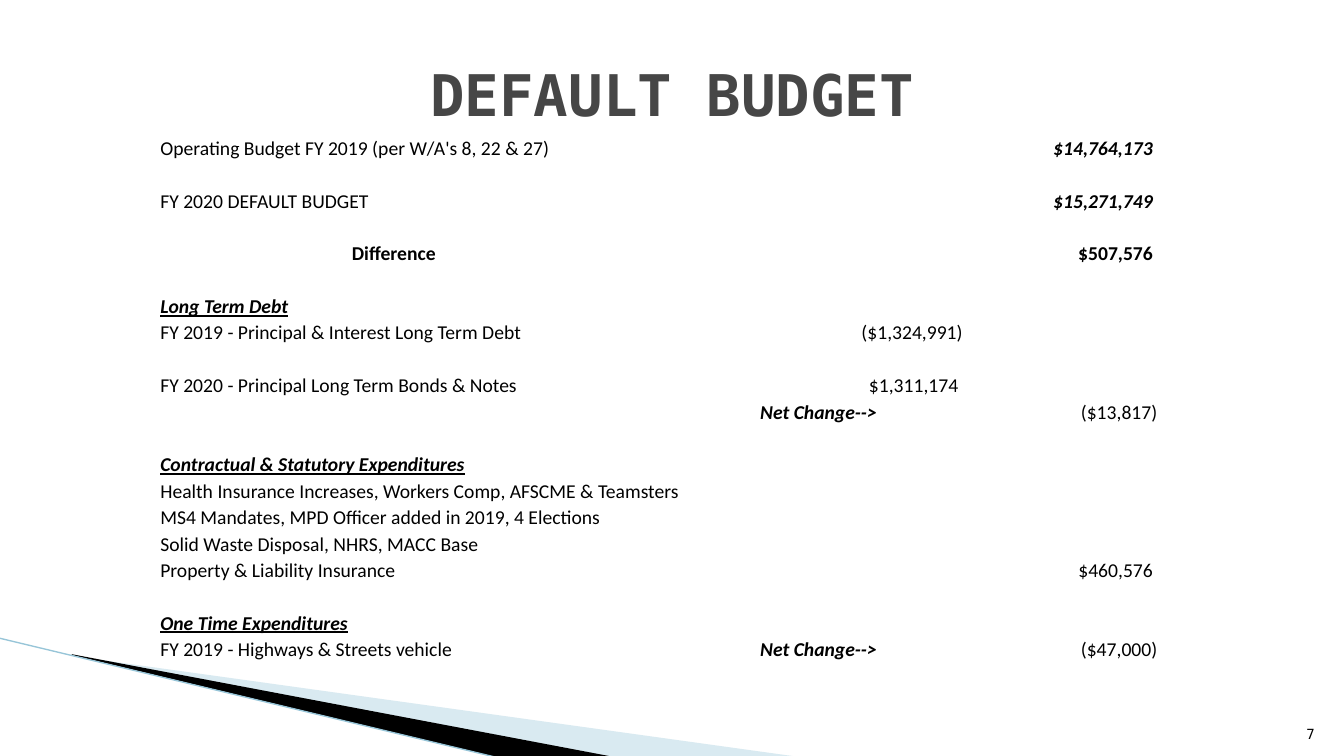
from lxml.etree import SubElement
from pptx import Presentation
from pptx.dml.color import RGBColor
from pptx.enum.shapes import MSO_CONNECTOR as Connector
from pptx.enum.text import MSO_ANCHOR as Anchor, PP_ALIGN as Align
from pptx.oxml.ns import qn
from pptx.util import Inches, Pt

PLAIN = {}
BOLD = {"bold": True}
STRONG = {"bold": True, "italic": True}
HEADING = {**STRONG, "underline": True}

COLUMN_WIDTHS = [1.9, 0.91, 3.14, 2.03, 1.93]
TABLE_HEIGHT = 5.24
CHANGE, TOTAL = 3, 4  # columns of the amounts

# Row: {column: (text, columns spanned, format, alignment)}


def label(text, span=3, style=PLAIN, column=0):
    return {column: (text, span, style, Align.LEFT)}


def amount(text, column=TOTAL, style=PLAIN):
    return {column: (text, 1, style, Align.RIGHT)}


NET_CHANGE = label("Net Change-->", 1, STRONG, CHANGE)
BUDGET_ROWS = [
    label("Operating Budget FY 2019 (per W/A's 8, 22 & 27)", 4)
    | amount("$14,764,173 ", style=STRONG),
    {},
    label("FY 2020 DEFAULT BUDGET") | amount("$15,271,749 ", style=STRONG),
    {},
    label("Difference", 2, BOLD, 1) | amount("$507,576 ", style=BOLD),
    {},
    label("Long Term Debt", 2, HEADING),
    label("FY 2019 - Principal & Interest Long Term Debt")
    | amount("($1,324,991)", CHANGE),
    {},
    label("FY 2020 - Principal Long Term Bonds & Notes")
    | amount("$1,311,174 ", CHANGE),
    NET_CHANGE | amount("($13,817)"),
    {},
    label("Contractual & Statutory Expenditures", style=HEADING),
    label("Health Insurance Increases, Workers Comp, AFSCME & Teamsters", 5),
    label("MS4 Mandates, MPD Officer added in 2019, 4 Elections", 4),
    label("Solid Waste Disposal, NHRS, MACC Base"),
    label("Property & Liability Insurance") | amount("$460,576 "),
    {},
    label("One Time Expenditures", style=HEADING),
    label("FY 2019 - Highways & Streets vehicle")
    | NET_CHANGE | amount("($47,000)"),
]


def rgb(hex_colour):
    return RGBColor.from_string(hex_colour)


class BudgetSlide:
    title_font = "DejaVu Sans Mono"
    body_font = "Calibri"
    body_size = 14
    black = "000000"
    grey = "464646"

    def __init__(self, deck):
        self.slide = deck.slides.add_slide(deck.slide_layouts[5])
        self.shapes = self.slide.shapes

    def add_words(self, frame, text, font, size, colour, align, style=PLAIN):
        paragraph = frame.paragraphs[0]
        paragraph.alignment = align
        run = paragraph.add_run()
        run.text = text
        values = {"name": font, "size": Pt(size), **style}
        for key, value in values.items():
            setattr(run.font, key, value)
        run.font.color.rgb = rgb(colour)

    def title(self, text, left, top, width, height):
        heading = self.shapes.title
        box = {"left": left, "top": top, "width": width, "height": height}
        for key, value in box.items():
            setattr(heading, key, Inches(value))
        heading.text_frame.vertical_anchor = Anchor.MIDDLE
        self.add_words(heading.text_frame, text, self.title_font, 41,
                       self.grey, Align.CENTER, BOLD)

    def text(self, text, size, *box):
        frame = self.shapes.add_textbox(*map(Inches, box)).text_frame
        frame.word_wrap = True
        frame.vertical_anchor = Anchor.BOTTOM
        self.add_words(frame, text, self.title_font, size, self.black,
                       Align.RIGHT)

    def wedge(self, points, colour, opacity=100):
        start, *others = [(Inches(x), Inches(y)) for x, y in points]
        builder = self.shapes.build_freeform(*start)
        builder.add_line_segments(others, close=True)
        wedge = builder.convert_to_shape()
        wedge.shadow.inherit = False
        wedge.fill.solid()
        wedge.fill.fore_color.rgb = rgb(colour)
        wedge.line.fill.background()
        if opacity < 100:
            tint = wedge._element.spPr.find(".//" + qn("a:srgbClr"))
            SubElement(tint, qn("a:alpha"), val=str(opacity * 1000))

    def line(self, start, end, colour, width):
        ends = map(Inches, (*start, *end))
        edge = self.shapes.add_connector(Connector.STRAIGHT, *ends)
        edge.line.color.rgb = rgb(colour)
        edge.line.width = Pt(width)
        SubElement(edge._element.spPr, qn("a:effectLst"))

    def table(self, rows, left, top):
        box = (left, top, sum(COLUMN_WIDTHS), TABLE_HEIGHT)
        table = self.shapes.add_table(len(rows), len(COLUMN_WIDTHS),
                                      *map(Inches, box)).table
        table.first_row = table.horz_banding = False
        for column, width in zip(table.columns, COLUMN_WIDTHS):
            column.width = Inches(width)
        for r, entries in enumerate(rows):
            for c in range(len(COLUMN_WIDTHS)):
                self.cell(table, r, c, entries.get(c))

    def cell(self, table, r, c, entry):
        cell = table.cell(r, c)
        values = {"margin_left": Inches(0.01), "margin_right": Inches(0.01),
                  "margin_top": Inches(0.01), "margin_bottom": 0,
                  "vertical_anchor": Anchor.BOTTOM}
        for key, value in values.items():
            setattr(cell, key, value)
        cell.fill.background()
        if entry:
            text, span, style, align = entry
            if span > 1:
                cell.merge(table.cell(r, c + span - 1))
            self.add_words(cell.text_frame, text, self.body_font,
                           self.body_size, self.black, align, style)
        else:
            # An empty cell keeps the row low only with its own text size
            SubElement(cell.text_frame.paragraphs[0]._p, qn("a:endParaRPr"),
                       sz=str(self.body_size * 100))


def main():
    deck = Presentation()
    deck.slide_width, deck.slide_height = Inches(13.33), Inches(7.5)
    budget = BudgetSlide(deck)

    # Corner decoration
    budget.wedge([(0.73, 6.51), (7.93, 7.51), (6.08, 7.51), (0.73, 6.5)],
                 "A0CBDC", opacity=40)
    budget.wedge([(0.71, 6.49), (6.09, 7.51), (4.96, 7.52), (0.72, 6.5)],
                 budget.black)
    budget.line((-0.01, 6.33), (4.95, 7.52), "97C5D8", 0.95)

    # Title, budget table and page number
    budget.title("DEFAULT BUDGET", 0.67, 0.3, 12, 1.25)
    budget.table(BUDGET_ROWS, 1.58, 1.33)
    budget.text("7", 10, 12.61, 7.01, 0.53, 0.4)

    deck.save("out.pptx")


if __name__ == "__main__":
    main()
